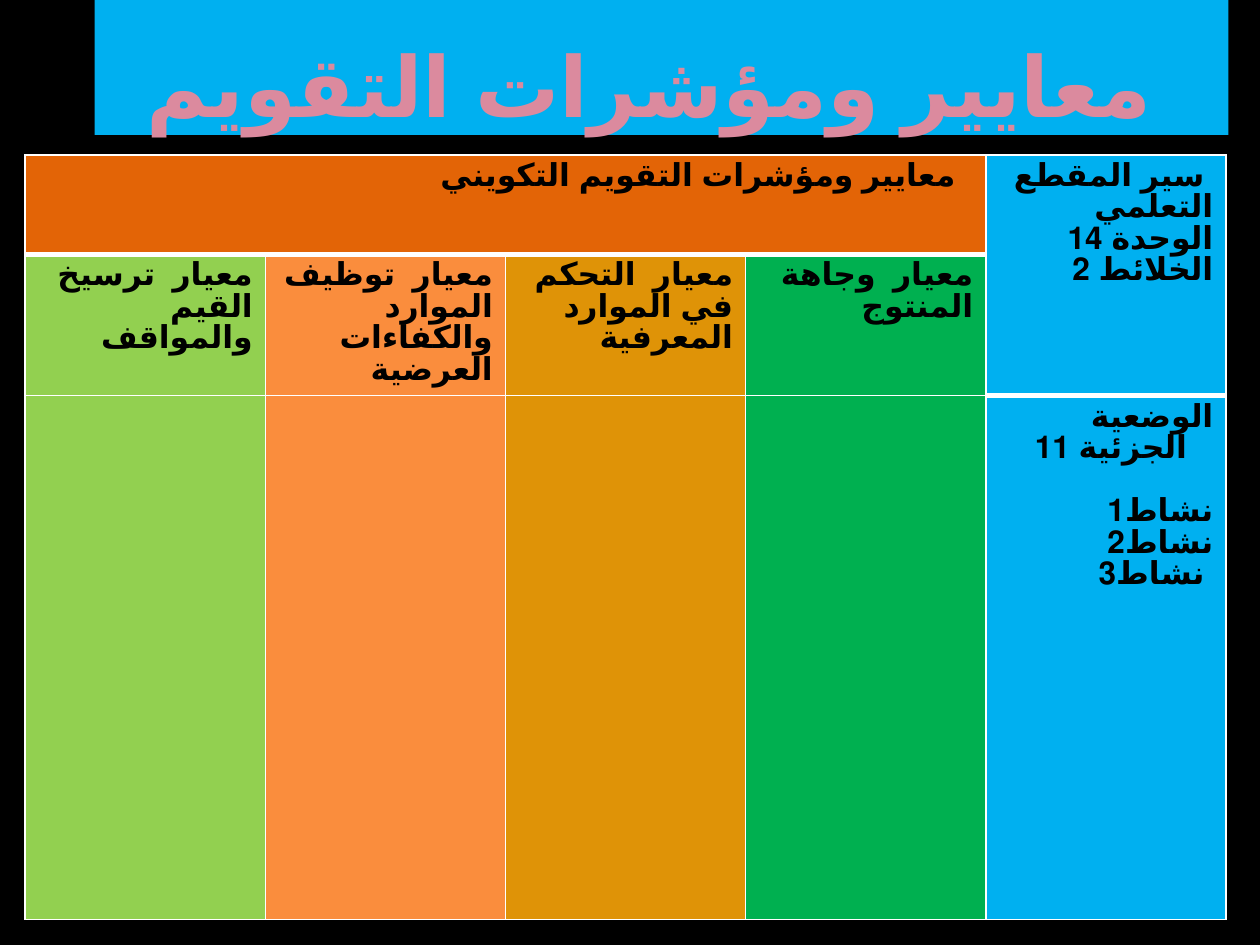
from lxml import etree
from pptx import Presentation
from pptx import util as u
from pptx.dml.color import RGBColor
from pptx.enum import lang, text
from pptx.oxml import ns

COLORS = {
    "background": "000000",
    "ink": "000000",
    "border": "FFFFFF",
    "title": "DB8A9E",
    "sequence": "00B0F0",
    "formative": "E36406",
    "values": "92D050",
    "resources": "FA8D3D",
    "knowledge": "DF9307",
    "relevance": "00B050",
}
CRITERIA = [
    ("values", "معيار\u00a0 ترسيخ القيم والمواقف"),
    ("resources", "معيار\u00a0 توظيف الموارد والكفاءات العرضية"),
    ("knowledge", "معيار\u00a0 التحكم في الموارد المعرفية"),
    ("relevance", "معيار\u00a0 وجاهة المنتوج"),
]
SEQUENCE = ["سير المقطع ", "التعلمي", "الوحدة 14", " الخلائط 2"]
SITUATION = ["الوضعية الجزئية 11   "]
ACTIVITIES = ["نشاط1", "نشاط2", "نشاط3 "]
ROW_HEIGHTS = [0.79, 1.12, 4.16]


def rgb(name):
    return RGBColor.from_string(COLORS[name])


def add_run(paragraph, words, font_name, size, color):
    run = paragraph.add_run()
    run.text = words
    run.font.name = font_name
    run.font.size = u.Pt(size)
    run.font.bold = True
    run.font.language_id = lang.MSO_LANGUAGE_ID.ARABIC_ALGERIA
    run.font.color.rgb = rgb(color)


def set_borders(cell, heavy_edges):
    properties = cell._tc.get_or_add_tcPr()
    for edge in "LRTB":
        width = 3 if edge in heavy_edges else 1
        line = etree.SubElement(properties, ns.qn("a:ln" + edge), w=str(u.Pt(width)))
        fill = etree.SubElement(line, ns.qn("a:solidFill"))
        etree.SubElement(fill, ns.qn("a:srgbClr"), val=COLORS["border"])


def fill_cell(cell, color, lines=(), heavy_edges=""):
    set_borders(cell, heavy_edges)
    cell.fill.solid()
    cell.fill.fore_color.rgb = rgb(color)
    frame = cell.text_frame
    for index, words in enumerate(lines):
        paragraph = frame.add_paragraph() if index else frame.paragraphs[0]
        paragraph.alignment = text.PP_ALIGN.RIGHT
        add_run(paragraph, words, "TeX Gyre Pagella", 18, "ink")


def place_title(slide, left, top, width, height):
    title = slide.shapes.title
    title.left, title.top, title.width, title.height = left, top, width, height
    title.fill.solid()
    title.fill.fore_color.rgb = rgb("sequence")
    frame = title.text_frame
    frame.auto_size = text.MSO_AUTO_SIZE.NONE
    frame.word_wrap = True
    frame.vertical_anchor = text.MSO_ANCHOR.BOTTOM
    frame.margin_left = frame.margin_right = u.Inches(0.05)
    frame.margin_top = frame.margin_bottom = 0
    heading = frame.paragraphs[0]
    heading.alignment = text.PP_ALIGN.CENTER
    add_run(heading, "معايير ومؤشرات التقويم ", "Open Sans", 48, "title")


def place_criteria_table(slide, left, top, width, height):
    last = len(CRITERIA)
    table = slide.shapes.add_table(3, last + 1, left, top, width, height).table
    table.first_row = table.horz_banding = False
    for row, row_height in zip(table.rows, ROW_HEIGHTS):
        row.height = u.Inches(row_height)

    table.cell(0, 0).merge(table.cell(0, last - 1))
    table.cell(0, last).merge(table.cell(1, last))
    for column, (color, criterion) in enumerate(CRITERIA):
        header = ["معايير ومؤشرات التقويم التكويني\u00a0 "] if column == 0 else []
        fill_cell(table.cell(0, column), "formative", header, "B")
        fill_cell(table.cell(1, column), color, [criterion], "T")
        fill_cell(table.cell(2, column), color)

    fill_cell(table.cell(0, last), "sequence", SEQUENCE, "B")
    fill_cell(table.cell(1, last), "sequence", heavy_edges="B")
    situation = table.cell(2, last)
    fill_cell(situation, "sequence", SITUATION + ACTIVITIES, "T")
    first_activity = situation.text_frame.paragraphs[len(SITUATION)]
    first_activity.space_before = u.Pt(18)


def main():
    deck = Presentation()
    deck.slide_width, deck.slide_height = u.Inches(10), u.Inches(7.5)
    slide = deck.slides.add_slide(deck.slide_layouts[5])
    slide.background.fill.solid()
    slide.background.fill.fore_color.rgb = rgb("background")
    place_title(slide, u.Inches(0.75), 0, u.Inches(9), u.Inches(1.07))
    place_criteria_table(
        slide, u.Inches(0.2), u.Inches(1.23), u.Inches(9.53), u.Inches(sum(ROW_HEIGHTS))
    )
    deck.save("out.pptx")


if __name__ == "__main__":
    main()
